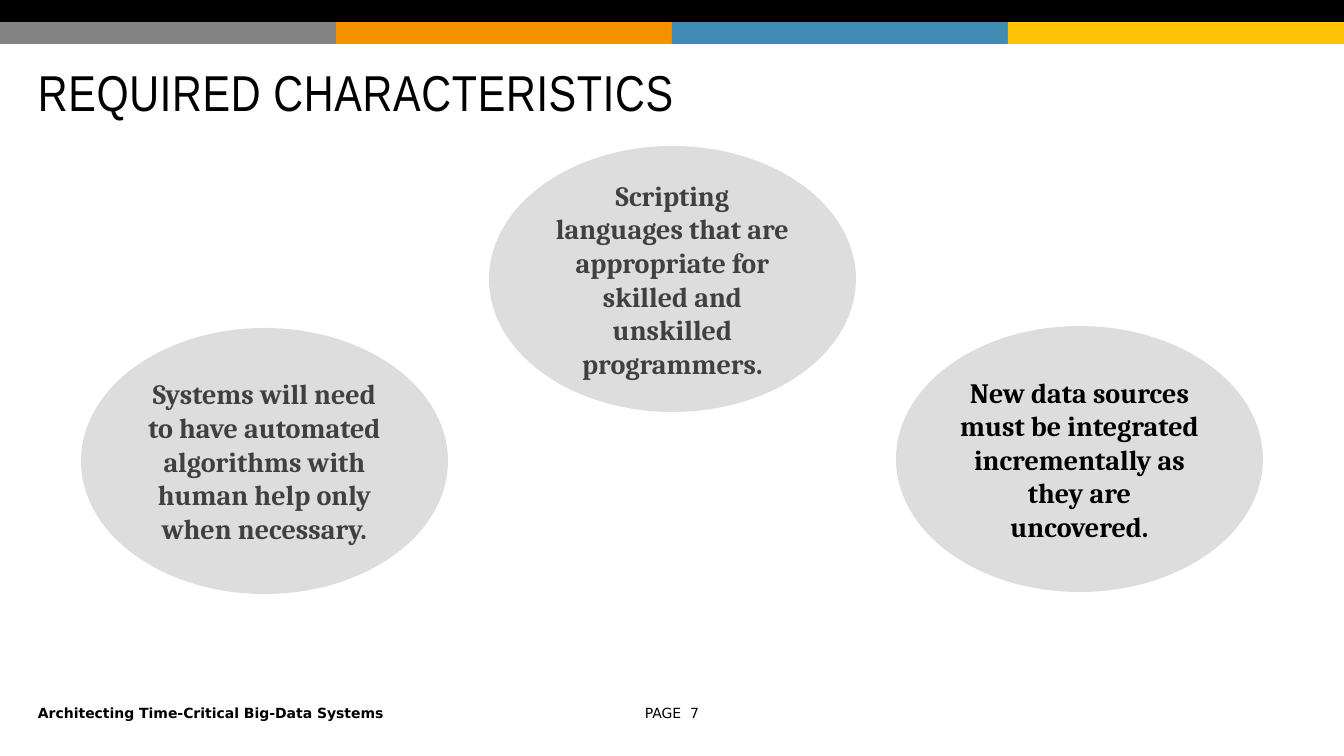
from pptx import Presentation
from pptx import util as u
from pptx.dml.color import RGBColor
from pptx.enum import shapes, text

WIDTH, HEIGHT = 1344, 756
BAND = 22
BAND_COLOURS = ["838383", "F69200", "418AB3", "FEC306"]
OVAL_WIDTH, OVAL_HEIGHT = 367, 266
CHARACTERISTICS = [
    (489, 146, "404040", "Scripting languages that are appropriate for "
                         "skilled and unskilled programmers."),
    (896, 326, "000000", "New data sources must be integrated "
                         "incrementally as they are uncovered."),
    (81, 328, "404040", "Systems will need to have automated algorithms "
                        "with human help only when necessary."),
]


def px(length):
    return u.Emu(round(length * 12192000 / WIDTH))


def colour(code):
    return RGBColor.from_string(code)


def write(frame, wording, ink="000000", align=text.PP_ALIGN.LEFT, **style):
    """Put one vertically centred paragraph in the frame; style holds font values."""
    frame.word_wrap = True
    frame.vertical_anchor = text.MSO_ANCHOR.MIDDLE
    paragraph = frame.paragraphs[0]
    paragraph.alignment = align
    run = paragraph.add_run()
    run.text = wording
    run.font.color.rgb = colour(ink)
    for key, value in style.items():
        setattr(run.font, key, value)
    return paragraph


def add_filled(slide, preset, box, fill):
    shape = slide.shapes.add_shape(preset, *map(px, box))
    shape.shadow.inherit = False
    shape.fill.solid()
    shape.fill.fore_color.rgb = colour(fill)
    shape.line.fill.background()
    return shape


def add_label(slide, box, wording, **style):
    label = slide.shapes.add_textbox(*map(px, box))
    return write(label.text_frame, wording, **style)


def add_header(slide):
    rectangle = shapes.MSO_SHAPE.RECTANGLE
    step = WIDTH // len(BAND_COLOURS)
    for index, fill in enumerate(BAND_COLOURS):
        add_filled(slide, rectangle, (index * step, BAND, step, BAND), fill)
    add_filled(slide, rectangle, (0, 0, WIDTH, BAND), "000000")
    title = add_label(slide, (28, 47, 1275, 99), "REQUIRED CHARACTERISTICS",
                      name="Arial Narrow", size=u.Pt(36))
    title.line_spacing = 0.85
    title.runs[0].font._element.set("spc", "50")


def add_footer(slide):
    small = {"name": "DejaVu Sans", "size": u.Pt(10)}
    add_label(slide, (28, 699, 577, 27),
              "Architecting Time-Critical Big-Data Systems", bold=True, **small)
    add_label(slide, (616, 699, 112, 27), "PAGE  7",
              align=text.PP_ALIGN.CENTER, **small)


def add_characteristic(slide, left, top, ink, wording):
    oval = add_filled(slide, shapes.MSO_SHAPE.OVAL,
                      (left, top, OVAL_WIDTH, OVAL_HEIGHT), "DDDDDD")
    write(oval.text_frame, wording, ink, text.PP_ALIGN.CENTER,
          name="Cambria", size=u.Pt(20), bold=True)


def main():
    deck = Presentation()
    deck.slide_width, deck.slide_height = px(WIDTH), px(HEIGHT)
    slide = deck.slides.add_slide(deck.slide_layouts[6])
    add_header(slide)
    add_footer(slide)
    for characteristic in CHARACTERISTICS:
        add_characteristic(slide, *characteristic)
    deck.save("out.pptx")


if __name__ == "__main__":
    main()
